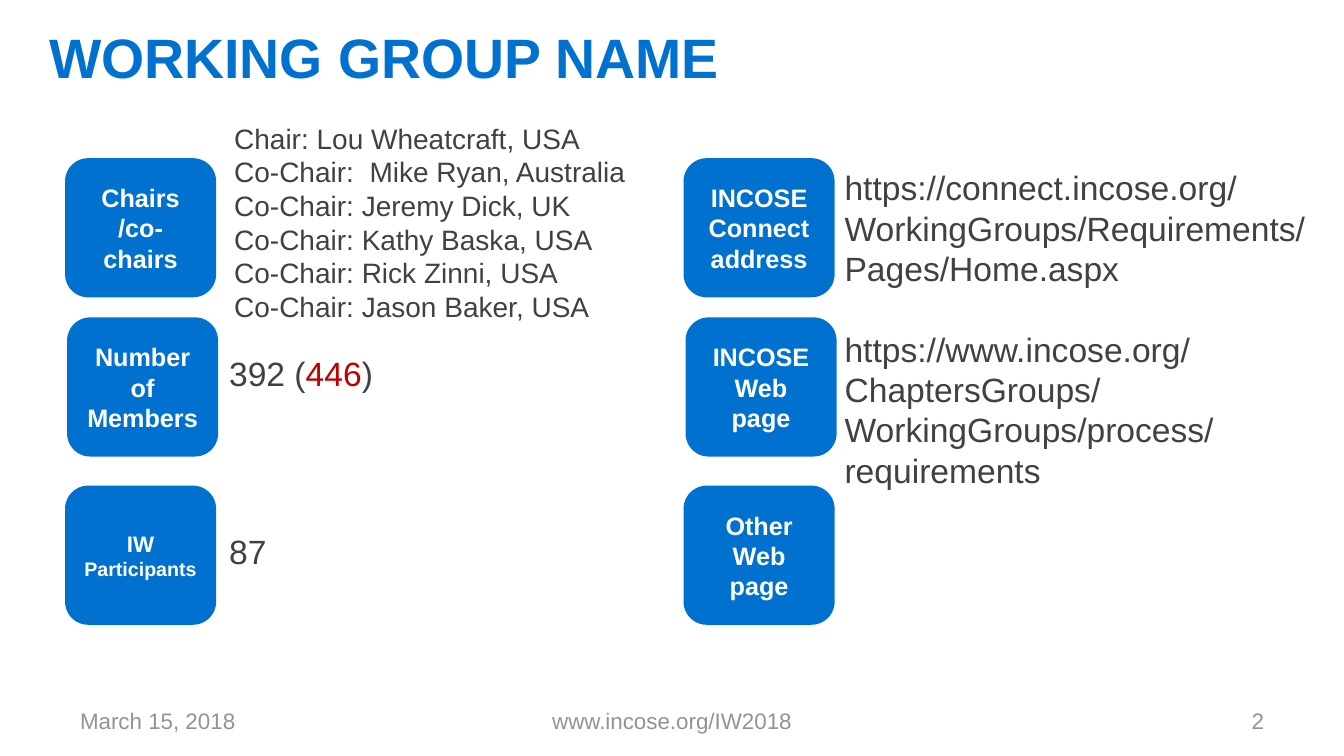
from pptx import Presentation, util as u
from pptx.dml.color import RGBColor
from pptx.enum import shapes, text

# Content: a paragraph is a list of (words, format) runs or a plain string
COLOR = {"blue": "0071CE", "ink": "414042", "red": "C00000",
         "gray": "939393", "white": "FFFFFF"}
TITLE = "WORKING GROUP NAME"
CHAIRS = ["Chair: Lou Wheatcraft, USA", "Co-Chair:  Mike Ryan, Australia",
          "Co-Chair: Jeremy Dick, UK", "Co-Chair: Kathy Baska, USA",
          "Co-Chair: Rick Zinni, USA", "Co-Chair: Jason Baker, USA"]
COUNT = [[("392 (", {}), ("446", {"color": "red"}), (")", {})]]
JOINED = [[("IW ", {"size": 16}), ("Participants", {"size": 14})]]
# Tiles by column, from top to bottom
TILES = [
    [["Chairs /co-chairs"], ["Number of Members"], JOINED],
    [["INCOSE Connect address"], ["INCOSE Web page"], ["Other Web page"]],
]
# Answers: left, top, width, height, size, paragraphs
FACTS = [
    (224, 116, 435, 213, 20, CHAIRS),
    (219, 347, 450, 50, 24, COUNT),
    (219, 525, 452, 50, 24, ["87"]),
    (834, 162, 509, 132, 24,
     ["https://connect.incose.org/WorkingGroups/Requirements/Pages/Home.aspx"]),
    (834, 323, 509, 132, 24,
     ["https://www.incose.org/ChaptersGroups/WorkingGroups/process/requirements"]),
]
# Footer: left, width, alignment, words
FOOT = [(67, 313, "LEFT", "March 15, 2018"),
        (459, 425, "CENTER", "www.incose.org/IW2018"),
        (963, 313, "RIGHT", "2")]

# Layout in px
COLS, ROWS = (65, 683), (158, 317, 485)
SHIFT = (0, 2, 0)  # the middle row sits slightly to the right
WIDE, HIGH = 151, 139
PAD = (13, 7)
SCALE = 9080  # EMU per px


def px(*nums):
    return [u.Emu(n * SCALE) for n in nums]


def write(shape, paras, size=24, color="ink", bold=False, align="LEFT",
          anchor="TOP", pad=(10, 5)):
    frame = shape.text_frame
    frame.word_wrap = True
    frame.vertical_anchor = text.MSO_ANCHOR[anchor]
    frame.margin_left = frame.margin_right = px(pad[0])[0]
    frame.margin_top = frame.margin_bottom = px(pad[1])[0]
    for i, runs in enumerate(paras):
        para = frame.add_paragraph() if i else frame.paragraphs[0]
        para.alignment = text.PP_ALIGN[align]
        for words, own in [(runs, {})] if isinstance(runs, str) else runs:
            run = para.add_run()
            run.text = words
            run.font.name = "Arial"
            run.font.size = u.Pt(own.get("size", size))
            run.font.bold = bold
            run.font.color.rgb = RGBColor.from_string(
                COLOR[own.get("color", color)])


deck = Presentation()
deck.slide_width, deck.slide_height = px(1343, 755)
slide = deck.slides.add_slide(deck.slide_layouts[6])
add = slide.shapes

# Title
write(add.add_textbox(*px(36, 22, 1209, 68)), [TITLE], size=39.6,
      color="blue", bold=True, anchor="MIDDLE", pad=PAD)

# Tiles
for left, column in zip(COLS, TILES):
    for top, shift, label in zip(ROWS, SHIFT, column):
        tile = add.add_shape(shapes.MSO_SHAPE.ROUNDED_RECTANGLE,
                             *px(left + shift, top, WIDE, HIGH))
        tile.shadow.inherit = False
        tile.fill.solid()
        tile.fill.fore_color.rgb = RGBColor.from_string(COLOR["blue"])
        tile.line.fill.background()
        write(tile, label, size=18, color="white", bold=True,
              align="CENTER", anchor="MIDDLE")

# Answers
for *box, size, paras in FACTS:
    write(add.add_textbox(*px(*box)), paras, size=size)

# Footer
for left, wide, align, words in FOOT:
    write(add.add_textbox(*px(left, 700, wide, 40)), [words], size=16,
          color="gray", align=align, anchor="MIDDLE", pad=PAD)

deck.save("out.pptx")
